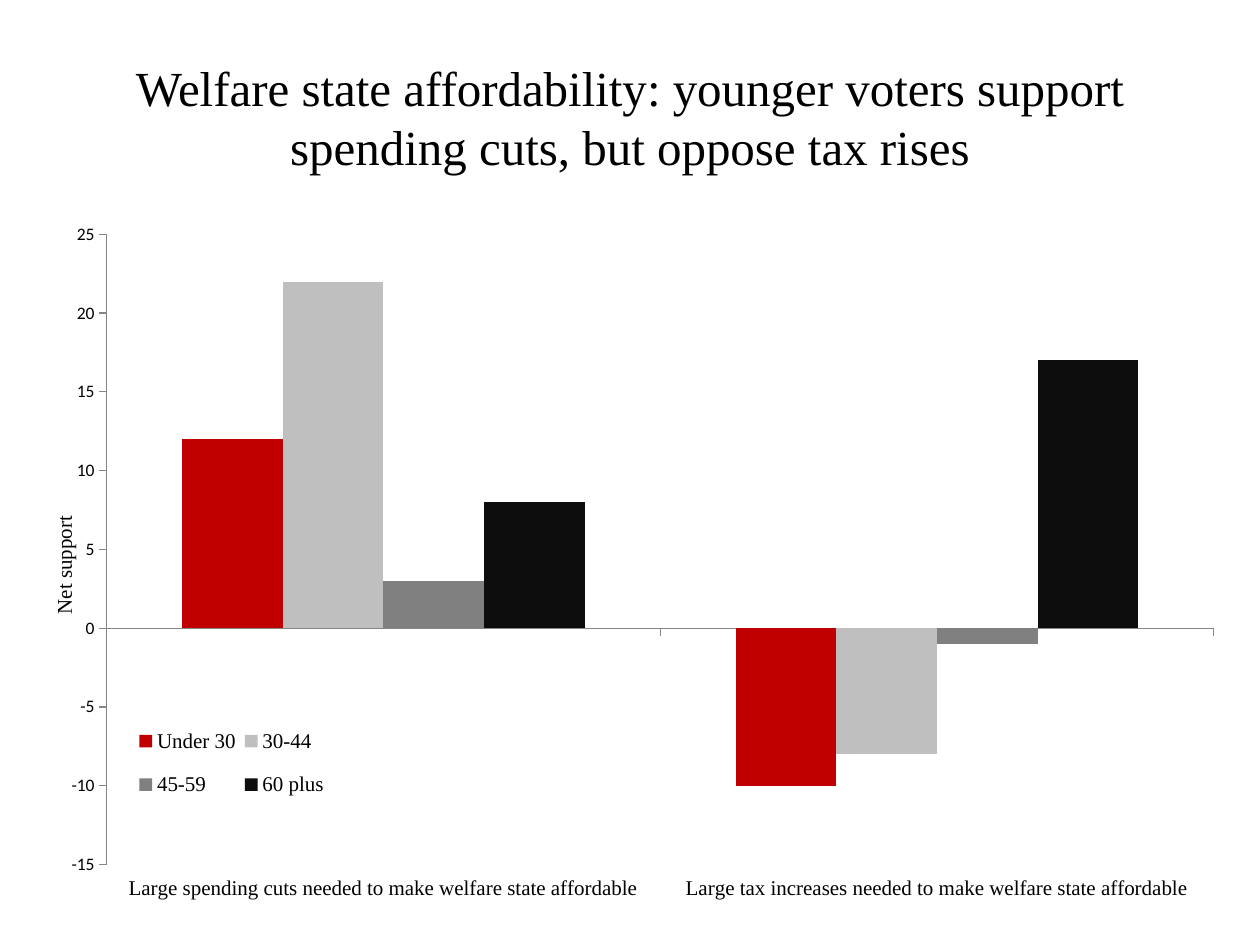
from lxml.etree import SubElement
from pptx import Presentation
from pptx.chart.data import CategoryChartData
from pptx.dml.color import RGBColor
from pptx.enum.chart import XL_CHART_TYPE, XL_LEGEND_POSITION, XL_TICK_LABEL_POSITION, XL_TICK_MARK
from pptx.enum.text import MSO_ANCHOR, PP_ALIGN
from pptx.oxml.ns import qn
from pptx.util import Cm, Pt

SERIF = "Times New Roman"
BLACK = "000000"
AXIS_GREY = "868686"
CATEGORIES = [
    "Large spending cuts needed to make welfare state affordable",
    "Large tax increases needed to make welfare state affordable",
]
AGE_GROUPS = [
    ("Under 30", (12, -10), "C00000"),
    ("30-44", (22, -8), "BFBFBF"),
    ("45-59", (3, -1), "808080"),
    ("60 plus", (8, 17), "0D0D0D"),
]


def color(value):
    """Turn a hex string into a colour."""
    return RGBColor.from_string(value)


def style_font(font, size, name=SERIF):
    """Set a plain black font."""
    font.name = name
    font.size = Pt(size)
    font.bold = False
    font.color.rgb = color(BLACK)


def set_layout(element, index, **values):
    """Place a chart part by fractions of the chart's size."""
    for old_layout in element.findall(qn("c:layout")):
        element.remove(old_layout)
    layout = element.makeelement(qn("c:layout"), {})
    element.insert(index, layout)
    manual = SubElement(layout, qn("c:manualLayout"))
    for tag, value in values.items():
        SubElement(manual, qn(f"c:{tag}")).set("val", str(value))


def add_title(slide, left, top, width, height):
    """Write the centred headline in its box."""
    shape = slide.shapes.add_textbox(left, top, width, height)
    frame = shape.text_frame
    frame.word_wrap = True
    frame.vertical_anchor = MSO_ANCHOR.MIDDLE
    paragraph = frame.paragraphs[0]
    paragraph.alignment = PP_ALIGN.CENTER
    run = paragraph.add_run()
    run.text = "Welfare state affordability: younger voters support spending cuts, but oppose tax rises"
    style_font(run.font, 28)


def style_axes(chart):
    """Format both axes and the value axis title."""
    for axis in (chart.category_axis, chart.value_axis):
        axis.has_major_gridlines = False
        axis.major_tick_mark = XL_TICK_MARK.OUTSIDE
        axis.minor_tick_mark = XL_TICK_MARK.NONE
        axis.format.line.color.rgb = color(AXIS_GREY)
        axis.format.line.width = Pt(0.75)
    chart.category_axis.tick_label_position = XL_TICK_LABEL_POSITION.LOW
    style_font(chart.category_axis.tick_labels.font, 12)

    value_axis = chart.value_axis
    value_axis.minimum_scale = -15
    value_axis.maximum_scale = 25
    value_axis.major_unit = 5
    style_font(value_axis.tick_labels.font, 10, "Calibri")
    title = value_axis.axis_title
    frame = title.text_frame
    frame._txBody.bodyPr.set("rot", "-5400000")
    frame._txBody.bodyPr.set("vert", "horz")
    run = frame.paragraphs[0].add_run()
    run.text = "Net support"
    style_font(run.font, 12)
    set_layout(title._element, 1, xMode="edge", yMode="edge", x=0.01, y=0.43)


def add_support_chart(slide, left, top, width, height):
    """Draw net support by age group as clustered columns."""
    data = CategoryChartData()
    data.categories = CATEGORIES
    for name, values, _ in AGE_GROUPS:
        data.add_series(name, values)
    chart = slide.shapes.add_chart(
        XL_CHART_TYPE.COLUMN_CLUSTERED, left, top, width, height, data
    ).chart
    chart.has_title = False
    style_font(chart.font, 10, "Calibri")

    plot = chart.plots[0]
    plot.gap_width = 150
    plot.vary_by_categories = False
    for series, (_, _, fill) in zip(plot.series, AGE_GROUPS):
        series.invert_if_negative = False
        series.format.fill.solid()
        series.format.fill.fore_color.rgb = color(fill)
    style_axes(chart)

    chart.has_legend = True
    legend = chart.legend
    legend.position = XL_LEGEND_POSITION.RIGHT
    legend.include_in_layout = False
    style_font(legend.font, 12)
    set_layout(legend._element, 1, xMode="edge", yMode="edge", x=0.08, y=0.72, w=0.17, h=0.16)
    plot_area = chart._chartSpace.find(f"{qn('c:chart')}/{qn('c:plotArea')}")
    set_layout(plot_area, 0, layoutTarget="inner", xMode="edge", yMode="edge",
               x=0.06, y=0.02, w=0.93, h=0.93)


def main():
    """Build and save the slide."""
    presentation = Presentation()
    presentation.slide_width = Cm(25.4)
    presentation.slide_height = Cm(19.05)
    slide = presentation.slides.add_slide(presentation.slide_layouts[6])
    add_title(slide, Cm(1.27), Cm(0.76), Cm(22.86), Cm(3.18))
    add_support_chart(slide, Cm(0.71), Cm(4.45), Cm(24), Cm(13.69))
    presentation.save("out.pptx")


if __name__ == "__main__":
    main()
